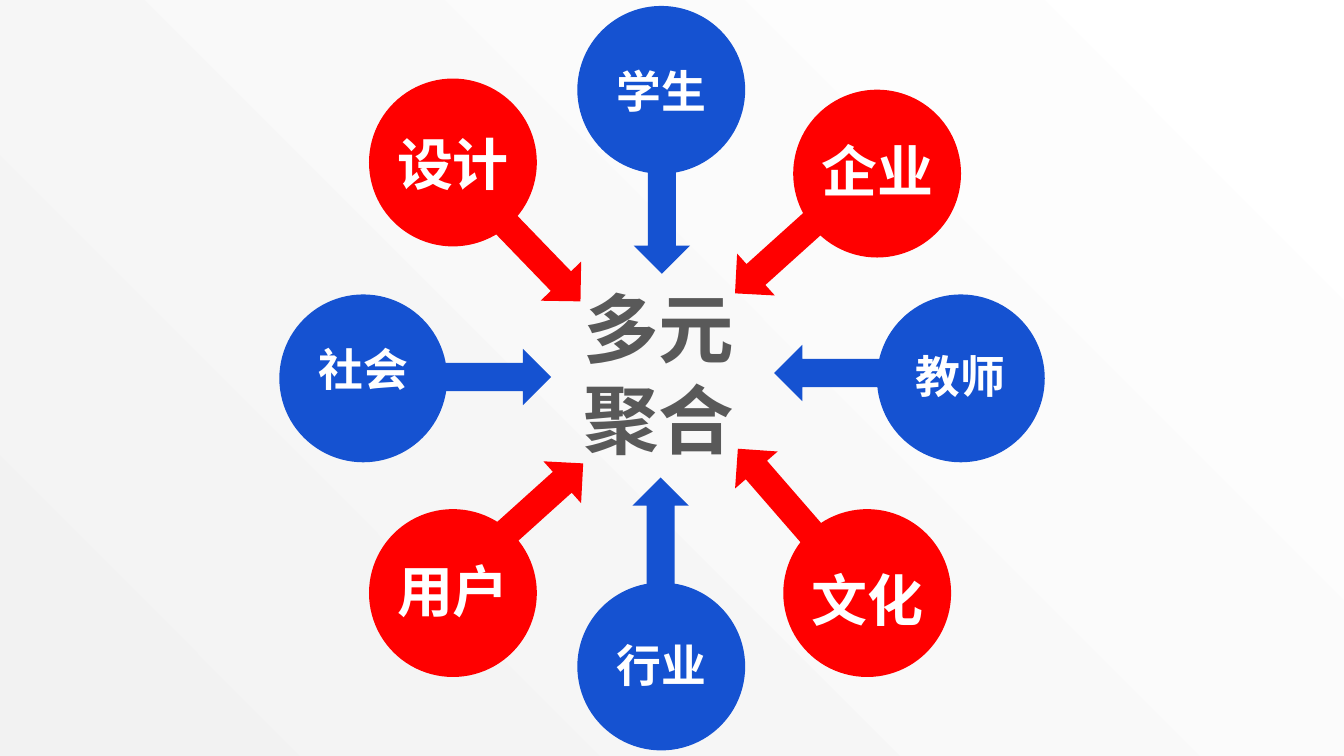
import pptx
import pptx.dml.color
import pptx.enum.shapes
import pptx.enum.text
import pptx.oxml
import pptx.oxml.ns
import pptx.util
from pptx.util import Cm

RGBColor = pptx.dml.color.RGBColor
MSO_SHAPE = pptx.enum.shapes.MSO_SHAPE

BLUE = RGBColor(0x15, 0x52, 0xD1)
RED = RGBColor(0xFF, 0x00, 0x00)
GRAY = RGBColor(0x59, 0x59, 0x59)
WHITE = RGBColor(0xFF, 0xFF, 0xFF)
PALE = RGBColor(0xF2, 0xF2, 0xF2)

DIAMETER = 4.23
LABEL_WIDTH = 5.03
ARROW_SIZE = (2.82, 1.42)

# label, circle left and top, label top, arrow left and top, arrow rotation (cm, degrees)
# clockwise from the top; blue and red take turns
PARTNERS = [
    ("学生", (14.55, 0.15), 1.47, (15.27, 4.78), 90),
    ("企业", (19.99, 2.26), 3.30, (18.16, 5.74), 138),
    ("教师", (22.10, 7.42), 8.66, (19.51, 8.69), 180),
    ("文化", (19.74, 12.83), 14.10, (18.11, 11.66), 229),
    ("行业", (14.55, 14.68), 15.93, (15.24, 12.73), 270),
    ("用户", (9.30, 12.83), 13.89, (12.24, 11.91), 318),
    ("社会", (7.04, 7.42), 8.48, (11.07, 8.79), 0),
    ("设计", (9.30, 1.98), 3.12, (12.24, 5.87), 46),
]


class Deck:
    font = "Noto Sans CJK SC"
    line_height = 1.21
    frame_format = {
        "word_wrap": True,
        "vertical_anchor": pptx.enum.text.MSO_ANCHOR.TOP,
        "auto_size": pptx.enum.text.MSO_AUTO_SIZE.SHAPE_TO_FIT_TEXT,
    }

    def __init__(self, s):
        self.s = s

    def background(self, start, end):
        fill = self.s.background.fill
        fill.gradient()
        fill.gradient_angle = 225
        for stop, color in zip(fill.gradient_stops, (start, end)):
            stop.color.rgb = color

    def set_lines(self, tf, lines, size, color):
        """Fill a text frame with centred bold lines."""
        for name, value in self.frame_format.items():
            setattr(tf, name, value)
        run_format = {"name": self.font, "size": pptx.util.Pt(size), "bold": True}
        for i, line in enumerate(lines):
            p = tf.add_paragraph() if i else tf.paragraphs[0]
            p.alignment = pptx.enum.text.PP_ALIGN.CENTER
            p.line_spacing = pptx.util.Pt(round(size * self.line_height, 1))
            r = p.add_run()
            r.text = line
            for name, value in run_format.items():
                setattr(r.font, name, value)
            r.font.color.rgb = color
            ea = pptx.oxml.parse_xml(
                '<a:ea xmlns:a="http://schemas.openxmlformats.org/drawingml/2006/main"'
                f' typeface="{self.font}"/>')
            r.font._element.find(pptx.oxml.ns.qn("a:latin")).addnext(ea)

    def title(self, lines, left, top, width, height, size):
        sp = self.s.shapes.title
        sp.left, sp.top, sp.width, sp.height = map(Cm, (left, top, width, height))
        self.set_lines(sp.text_frame, lines, size, GRAY)

    def label(self, text, left, top, size):
        height = size * self.line_height * 2.54 / 72 + 0.25
        sp = self.s.shapes.add_textbox(Cm(left), Cm(top), Cm(LABEL_WIDTH), Cm(height))
        self.set_lines(sp.text_frame, [text], size, WHITE)

    def shape(self, kind, left, top, width, height, color, rotation=0):
        sp = self.s.shapes.add_shape(kind, Cm(left), Cm(top), Cm(width), Cm(height))
        sp.rotation = rotation
        sp.shadow.inherit = False
        sp.fill.solid()
        sp.fill.fore_color.rgb = color
        sp.line.fill.background()


def main():
    prs = pptx.Presentation()
    prs.slide_width, prs.slide_height = Cm(33.87), Cm(19.05)
    deck = Deck(prs.slides.add_slide(prs.slide_layouts[5]))
    deck.background(WHITE, PALE)
    deck.title(["多元", "聚合"], 13.74, 6.96, 5.72, 4.88, 54)
    for i, (text, (left, top), label_top, arrow, rotation) in enumerate(PARTNERS):
        color, size = ((BLUE, 32), (RED, 40))[i % 2]
        deck.shape(MSO_SHAPE.OVAL, left, top, DIAMETER, DIAMETER, color)
        deck.label(text, left + (DIAMETER - LABEL_WIDTH) / 2, label_top, size)
        deck.shape(MSO_SHAPE.RIGHT_ARROW, *arrow, *ARROW_SIZE, color, rotation)
    prs.save("out.pptx")


if __name__ == "__main__":
    main()
